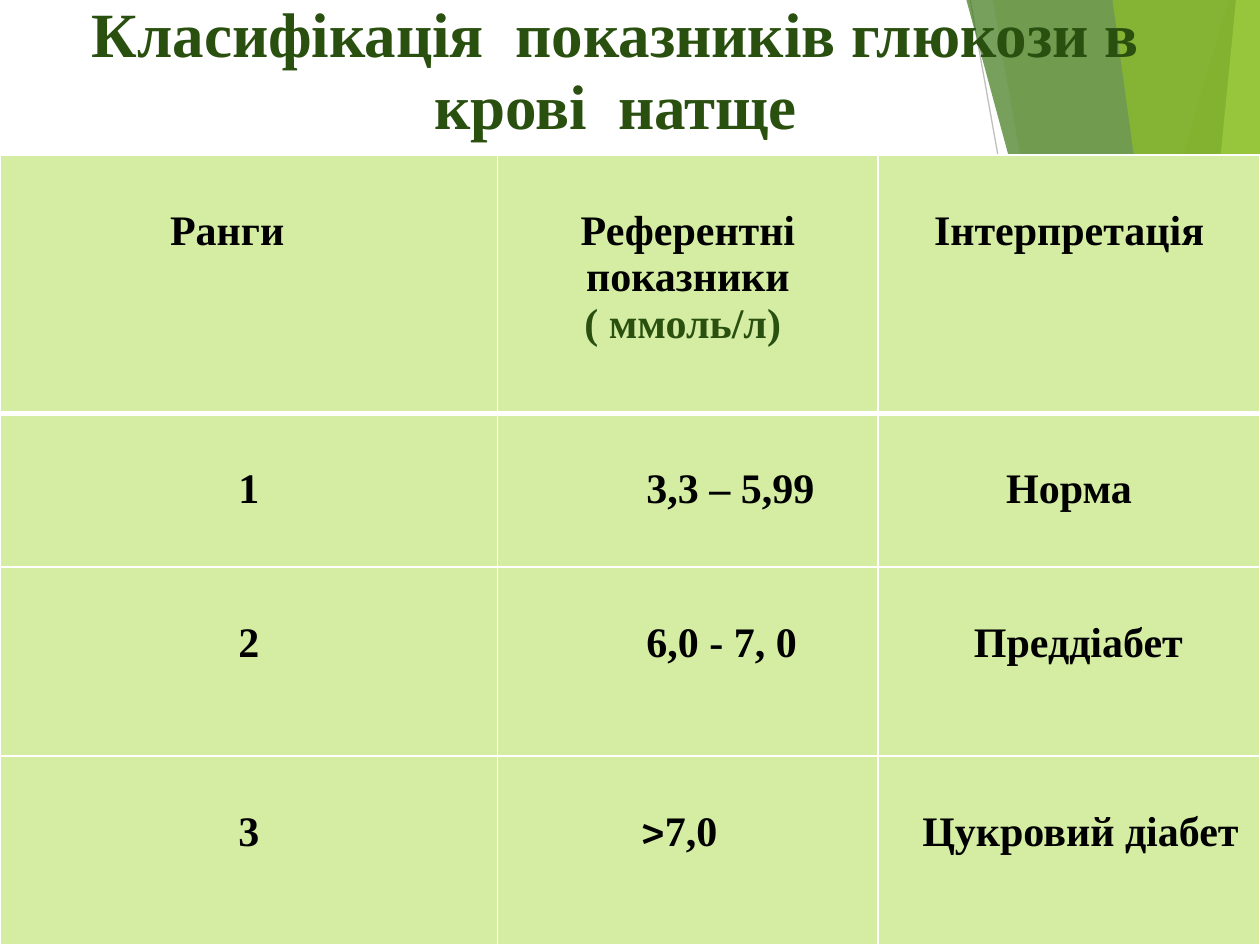
from lxml.etree import SubElement
from pptx import Presentation
from pptx.dml.color import RGBColor
from pptx.enum.shapes import MSO_CONNECTOR
from pptx.enum.text import MSO_ANCHOR, PP_ALIGN
from pptx.oxml.ns import qn
from pptx.util import Inches, Pt

WIDTH, HEIGHT = 10, 7.5
FONT, SIGN_FONT = "Times New Roman", "Cambria"

BLACK = RGBColor(0x00, 0x00, 0x00)
WHITE = RGBColor(0xFF, 0xFF, 0xFF)
GREY = RGBColor(0xBF, 0xBF, 0xBF)
DARK_GREEN = RGBColor(0x2A, 0x50, 0x10)
PALE_GREEN = RGBColor(0xD5, 0xED, 0xA2)
LEAF = RGBColor(0x90, 0xC2, 0x26)
FOREST = RGBColor(0x3F, 0x78, 0x19)
LIME = RGBColor(0xC0, 0xE4, 0x74)

# Bands reach the right edge: left x at the top, left x at the bottom, colour, opacity %
BANDS = [
    (9.75, 7.54, LEAF, 30),
    (7.88, 9.19, LEAF, 20),
    (7.67, 9.7, FOREST, 70),
    (9.81, 9.07, LIME, 70),
    (8.83, 9.86, LEAF, 65),
]

TABLE_TOP = 1.23
COLUMNS = [3.95, 3.02, 3.03]
ROWS = [2.05, 1.22, 1.5, 1.5]
CELL_TOP_MARGIN = 0.42

# Each cell: left indent (None means centred), then paragraphs of (text, format) spans
CELLS = [
    [(1.35, [[("Ранги", {})]]),
     (None, [[("Референтні показники", {})], [("( ммоль/л) ", {"color": DARK_GREEN})]]),
     (None, [[("Інтерпретація", {})]])],
    [(None, [[("1", {})]]),
     (1.18, [[("3,3 – 5,99", {})]]),
     (None, [[("Норма", {})]])],
    [(None, [[("2", {})]]),
     (1.18, [[("6,0 - 7, 0", {})]]),
     (0.76, [[("Преддіабет", {})]])],
    [(None, [[("3", {})]]),
     (1.13, [[(">", {"name": SIGN_FONT}), ("7,0", {})]]),
     (0.35, [[("Цукровий діабет", {})]])],
]


def add_span(para, text, size, color=BLACK, name=FONT):
    span = para.add_run()
    span.text = text
    for key, value in {"size": Pt(size), "bold": True, "name": name}.items():
        setattr(span.font, key, value)
    span.font.color.rgb = color


def add_band(page, top_x, bottom_x, color, opacity):
    builder = page.shapes.build_freeform(Inches(top_x), 0)
    corners = [(bottom_x, HEIGHT), (WIDTH, HEIGHT), (WIDTH, 0)]
    builder.add_line_segments([(Inches(x), Inches(y)) for x, y in corners], close=True)
    band = builder.convert_to_shape()
    band.shadow.inherit = False
    band.line.fill.background()
    band.fill.solid()
    band.fill.fore_color.rgb = color
    tint = band.fill._xPr.find(".//" + qn("a:srgbClr"))
    SubElement(tint, qn("a:alpha"), val=str(opacity * 1000))


def add_thin_line(page):
    line = page.shapes.add_connector(
        MSO_CONNECTOR.STRAIGHT, Inches(7.7), 0, Inches(9.04), Inches(HEIGHT))
    line.line.color.rgb = GREY
    line.line.width = Pt(0.75)
    SubElement(line._element.spPr, qn("a:effectLst"))


def add_title(page):
    # The box ends where the table starts, so both lines stay clear of it
    box = page.shapes.add_textbox(Inches(0.2), 0, Inches(9.37), Inches(TABLE_TOP))
    frame = box.text_frame
    frame_format = {"word_wrap": True, "vertical_anchor": MSO_ANCHOR.TOP,
                    "margin_top": 0, "margin_bottom": 0}
    for key, value in frame_format.items():
        setattr(frame, key, value)
    para = frame.paragraphs[0]
    para.alignment = PP_ALIGN.CENTER
    para.line_spacing = 0.95
    add_span(para, "Класифікація  показників глюкози в крові  натще", 36, DARK_GREEN)


def set_borders(cell, widths):
    properties = cell._tc.get_or_add_tcPr()
    for position, (side, width) in enumerate(widths.items()):
        border = properties.makeelement(qn("a:" + side), {"w": str(Pt(width))})
        fill = SubElement(border, qn("a:solidFill"))
        SubElement(fill, qn("a:srgbClr"), val=str(WHITE))
        properties.insert(position, border)


def fill_cell(cell, indent, paragraphs):
    cell.margin_top = Inches(CELL_TOP_MARGIN)
    if indent is not None:
        cell.margin_left = Inches(indent)
    cell.fill.solid()
    cell.fill.fore_color.rgb = PALE_GREEN
    frame = cell.text_frame
    for number, spans in enumerate(paragraphs):
        para = frame.add_paragraph() if number else frame.paragraphs[0]
        para.alignment = PP_ALIGN.CENTER if indent is None else PP_ALIGN.LEFT
        for text, style in spans:
            add_span(para, text, 24, **style)


def add_glucose_table(page):
    table = page.shapes.add_table(
        len(ROWS), len(COLUMNS), 0, Inches(TABLE_TOP),
        Inches(sum(COLUMNS)), Inches(sum(ROWS))).table
    for column, width in zip(table.columns, COLUMNS):
        column.width = Inches(width)
    for row, height in zip(table.rows, ROWS):
        row.height = Inches(height)
    for r, row in enumerate(CELLS):
        for c, (indent, paragraphs) in enumerate(row):
            cell = table.cell(r, c)
            fill_cell(cell, indent, paragraphs)
            # A thick rule parts the heading row from the body
            set_borders(cell, {"lnL": 1, "lnR": 1,
                               "lnT": 3 if r == 1 else 1,
                               "lnB": 3 if r == 0 else 1})


def main():
    deck = Presentation()
    deck.slide_width, deck.slide_height = Inches(WIDTH), Inches(HEIGHT)
    page = deck.slides.add_slide(deck.slide_layouts[6])

    # Corner decoration
    add_thin_line(page)
    for band in BANDS:
        add_band(page, *band)

    # Content
    add_title(page)
    add_glucose_table(page)
    deck.save("out.pptx")


if __name__ == "__main__":
    main()
